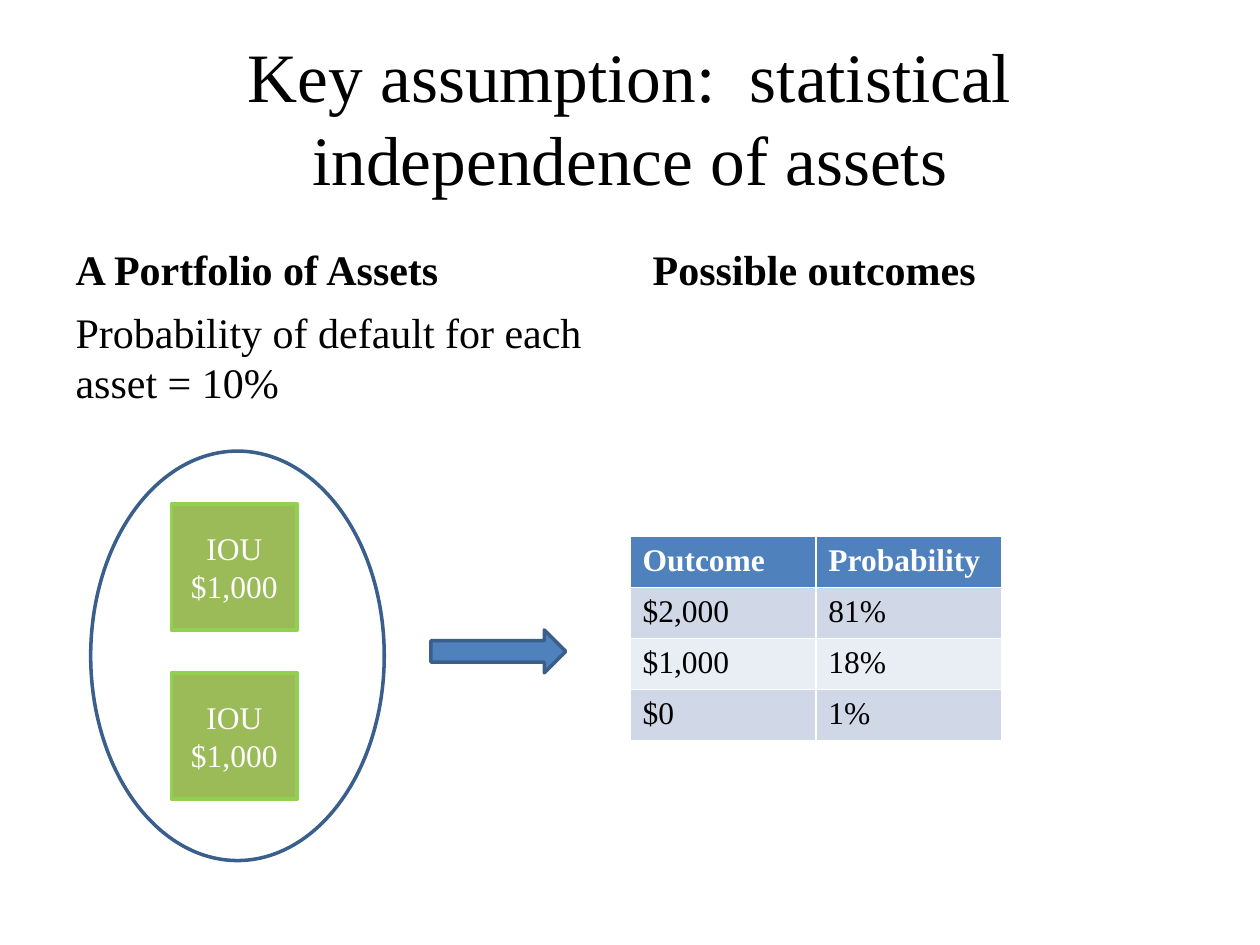
import pptx
import pptx.util
import pptx.dml.color
import pptx.enum.shapes
import pptx.enum.text

COLUMNS, ROWS = 100, 75
SLIDE_WIDTH, SLIDE_HEIGHT = pptx.util.Inches(10), pptx.util.Inches(7.5)
COLORS = {
    "ink": "000000",
    "paper": "FFFFFF",
    "accent": "4F81BD",
    "outline": "3A5F8C",
    "asset": "9BBB59",
    "asset_edge": "92D050",
    "band_dark": "D0D8E8",
    "band_light": "E9EDF4",
}
SHAPES = pptx.enum.shapes.MSO_SHAPE
ANCHORS = pptx.enum.text.MSO_ANCHOR
CENTER = pptx.enum.text.PP_ALIGN.CENTER


def color(name):
    return pptx.dml.color.RGBColor.from_string(COLORS[name])


def across(columns):
    return round(SLIDE_WIDTH * columns / COLUMNS)


def down(rows):
    return round(SLIDE_HEIGHT * rows / ROWS)


def place(shape, box):
    left, top, width, height = box
    values = {"left": across(left), "top": down(top),
              "width": across(width), "height": down(height)}
    for name, value in values.items():
        setattr(shape, name, value)


def write(text_frame, lines, size, ink="ink", bold=False, alignment=None):
    text_frame.text = "\n".join(lines)
    font_format = {"name": "Times New Roman", "size": pptx.util.Pt(size), "bold": bold}
    for paragraph in text_frame.paragraphs:
        paragraph.alignment = alignment
        for run in paragraph.runs:
            for name, value in font_format.items():
                setattr(run.font, name, value)
            run.font.color.rgb = color(ink)


def fill_placeholder(shape, box, text, size, anchor, bold=False, alignment=None):
    place(shape, box)
    write(shape.text_frame, [text], size, bold=bold, alignment=alignment)
    frame_format = {"word_wrap": True, "vertical_anchor": anchor,
                    "auto_size": pptx.enum.text.MSO_AUTO_SIZE.NONE}
    for name, value in frame_format.items():
        setattr(shape.text_frame, name, value)


def remove_bullet(paragraph):
    properties = paragraph._p.get_or_add_pPr()
    for name in ("marL", "indent"):
        properties.set(name, "0")
    properties.append(pptx.oxml.parse_xml(
        '<a:buNone xmlns:a="http://schemas.openxmlformats.org/drawingml/2006/main"/>'))


def add_outlined_shape(slide, kind, box, line, fill=None):
    shape = slide.shapes.add_shape(kind, 0, 0, 0, 0)
    place(shape, box)
    shape.shadow.inherit = False
    shape.line.color.rgb = color(line)
    shape.line.width = pptx.util.Pt(2)
    if fill:
        shape.fill.solid()
        shape.fill.fore_color.rgb = color(fill)
    else:
        shape.fill.background()
    return shape


def build_headings(slide, box):
    left, top, width, height = box
    title, left_heading, body, right_heading, empty = slide.placeholders
    column, heading_top, heading_height = 44.2, top + 13.8, 7
    body_top = heading_top + heading_height
    fill_placeholder(title, (left, top, width, 12.5),
                     "Key assumption:  statistical independence of assets",
                     39.6, ANCHORS.MIDDLE, alignment=CENTER)
    headings = (
        (left_heading, left, "A Portfolio of Assets"),
        (right_heading, left + width - column, "Possible outcomes"),
    )
    for heading, heading_left, text in headings:
        fill_placeholder(heading, (heading_left, heading_top, column, heading_height),
                         text, 24, ANCHORS.BOTTOM, bold=True)
    fill_placeholder(body, (left, body_top, column, top + height - body_top),
                     "Probability of default for each asset = 10%", 24, ANCHORS.TOP)
    remove_bullet(body.text_frame.paragraphs[0])
    empty.element.getparent().remove(empty.element)


def build_portfolio(slide, box):
    left, top, width, height = box
    add_outlined_shape(slide, SHAPES.OVAL, box, "outline")
    side, pitch = 10, 13.4
    for index in range(2):
        asset_box = (left + 6.4, top + 4.2 + index * pitch, side, side)
        asset = add_outlined_shape(slide, SHAPES.RECTANGLE, asset_box, "asset_edge", "asset")
        asset.text_frame.vertical_anchor = ANCHORS.MIDDLE
        write(asset.text_frame, ["IOU", "$1,000"], 18, "paper", alignment=CENTER)


def build_outcomes(slide, box):
    records = (("Outcome", "Probability"), ("$2,000", "81%"), ("$1,000", "18%"), ("$0", "1%"))
    frame = slide.shapes.add_table(len(records), 2, 0, 0, across(box[2]), down(box[3]))
    place(frame, box)
    for row, record in enumerate(records):
        header = row == 0
        fill = "accent" if header else ("band_light", "band_dark")[row % 2]
        for column, text in enumerate(record):
            cell = frame.table.cell(row, column)
            cell.fill.solid()
            cell.fill.fore_color.rgb = color(fill)
            write(cell.text_frame, [text], 18, "paper" if header else "ink", bold=header)


def main():
    presentation = pptx.Presentation()
    presentation.slide_width, presentation.slide_height = SLIDE_WIDTH, SLIDE_HEIGHT
    slide = presentation.slides.add_slide(presentation.slide_layouts.get_by_name("Comparison"))
    build_headings(slide, (5, 3, 90, 64))
    build_outcomes(slide, (50, 42.6, 29.5, 16.2))
    build_portfolio(slide, (7.2, 35.8, 23.3, 32.5))
    add_outlined_shape(slide, SHAPES.RIGHT_ARROW, (34.2, 50, 10.7, 3.4), "outline", "accent")
    presentation.save("out.pptx")


if __name__ == "__main__":
    main()
